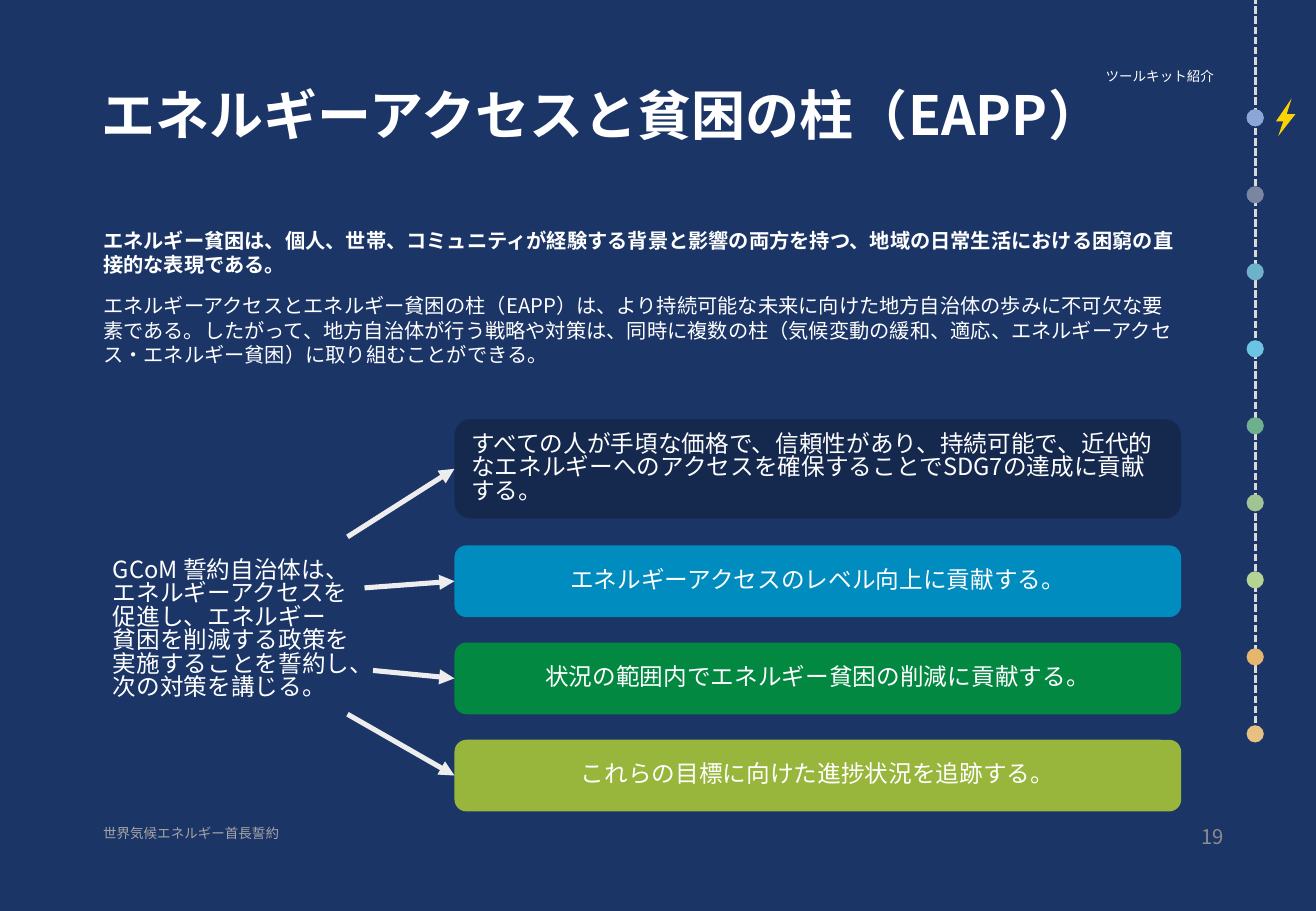
from lxml import etree
from pptx import Presentation
from pptx.dml.color import RGBColor
from pptx.enum.dml import MSO_LINE
from pptx.enum.shapes import MSO_CONNECTOR, MSO_SHAPE
from pptx.enum.text import MSO_ANCHOR, PP_ALIGN
from pptx.oxml.ns import qn
from pptx.util import Inches, Pt

LEFT, CENTER, RIGHT = PP_ALIGN.LEFT, PP_ALIGN.CENTER, PP_ALIGN.RIGHT
TOP, MIDDLE, BOTTOM = MSO_ANCHOR.TOP, MSO_ANCHOR.MIDDLE, MSO_ANCHOR.BOTTOM
FONT = "Noto Sans CJK JP"
C = {
    "navy": "1C3567", "dark": "15284D", "blue": "008CBE", "green": "038842",
    "lime": "99B63C", "white": "FFFFFF", "arrow": "EDEDED", "track": "D9D9D9",
    "footer": "A6A6A6", "number": "8C8C8C", "bolt": "FAD307",
}
C = {name: RGBColor.from_string(value) for name, value in C.items()}

prs = Presentation()
prs.slide_width, prs.slide_height = Inches(10.83), Inches(7.5)
s = prs.slides.add_slide(prs.slide_layouts[6])
s.background.fill.solid()
s.background.fill.fore_color.rgb = C["navy"]


def write(sp, paragraphs, size, color="white", align=LEFT, anchor=TOP, spacing=0.83):
    """Fill a shape with (text, bold) paragraphs."""
    tf = sp.text_frame
    tf.word_wrap = True
    tf.vertical_anchor = anchor
    for i, (text, bold) in enumerate(paragraphs):
        p = tf.add_paragraph() if i else tf.paragraphs[0]
        p.alignment, p.line_spacing = align, spacing
        p.space_before = Pt(10 if i else 0)
        for j, line in enumerate(text.split("\n")):
            if j:
                p.add_line_break()
            r = p.add_run()
            r.text = line
            r.font.size, r.font.bold, r.font.name = Pt(size), bold, FONT
            r.font.color.rgb = C[color]
            etree.SubElement(r.font._element, qn("a:ea")).set("typeface", FONT)


def add_filled(kind, x, y, w, h, color, alpha=None):
    sp = s.shapes.add_shape(kind, Inches(x), Inches(y), Inches(w), Inches(h))
    sp.shadow.inherit = False
    sp.line.fill.background()
    sp.fill.solid()
    sp.fill.fore_color.rgb = color
    if alpha:
        clr = sp.fill._xPr.find(qn("a:solidFill"))[0]
        etree.SubElement(clr, qn("a:alpha")).set("val", str(alpha * 1000))
    return sp


# Dotted progress track with one dot per chapter
track = s.shapes.add_connector(MSO_CONNECTOR.STRAIGHT, Inches(10.33), Inches(6.04),
                               Inches(10.33), 0)
track.line.color.rgb = C["track"]
track.line.width = Pt(1.5)
track.line.dash_style = MSO_LINE.SQUARE_DOT
etree.SubElement(track._element.spPr, qn("a:effectLst"))

CHAPTER_TINTS = [
    ["C3D2EF", "4C78CE"], ["1C3567"], ["008CBE"], ["00B0F0"], ["038842"],
    ["6AB24D"], ["92D050"], ["F19500"], ["F8A92A"],
]
for i, tints in enumerate(CHAPTER_TINTS):
    y = 0.9 + i * 0.634
    add_filled(MSO_SHAPE.OVAL, 10.26, y, 0.14, 0.14, C["track"])
    for tint in tints:
        add_filled(MSO_SHAPE.OVAL, 10.26, y, 0.14, 0.14, RGBColor.from_string(tint), 50)

# Lightning bolt marking the current chapter
BOLT_HALVES = [
    [(10.57, 1), (10.5, 1), (10.63, 0.81), (10.58, 0.97)],
    [(10.58, 0.94), (10.66, 0.94), (10.52, 1.12), (10.57, 0.97)],
]
for half in BOLT_HALVES:
    points = [(Inches(x), Inches(y)) for x, y in half]
    fb = s.shapes.build_freeform(*points[0])
    fb.add_line_segments(points[1:], close=True)
    sp = fb.convert_to_shape()
    sp.shadow.inherit = False
    sp.fill.solid()
    sp.fill.fore_color.rgb = C["bolt"]
    sp.line.fill.background()

# Text boxes: place, paragraphs, size, colour, alignment, anchor, line spacing
TEXTS = [
    ((0.74, 0.75, 8.67, 0.7), [("エネルギーアクセスと貧困の柱（EAPP）", True)],
     32, "white", LEFT, TOP, 0.75),
    ((6.67, 0.5, 3.42, 0.24), [("ツールキット紹介", False)],
     8, "white", RIGHT, BOTTOM, 0.75),
    ((0.75, 1.83, 9.05, 2.11), [
        ("エネルギー貧困は、個人、世帯、コミュニティが経験する背景と影響の両方を持つ、"
         "地域の日常生活における困窮の直接的な表現である。", True),
        ("エネルギーアクセスとエネルギー貧困の柱（EAPP）は、より持続可能な未来に向けた"
         "地方自治体の歩みに不可欠な要素である。したがって、地方自治体が行う戦略や対策は、"
         "同時に複数の柱（気候変動の緩和、適応、エネルギーアクセス・エネルギー貧困）に"
         "取り組むことができる。", False)],
     12, "white", LEFT, TOP, 1.0),
    ((0.83, 3.69, 2.23, 2.99), [
        ("GCoM 誓約自治体は、エネルギーアクセスを促進し、エネルギー\n"
         "貧困を削減する政策を実施することを誓約し、次の対策を講じる。", False)],
     14, "white", LEFT, MIDDLE, 0.83),
    ((0.75, 6.77, 1.83, 0.4), [("世界気候エネルギー首長誓約", False)],
     8, "footer", LEFT, TOP, 0.83),
    ((9.58, 6.77, 0.59, 0.4), [("19", False)], 12, "number", RIGHT, TOP, 0.83),
]
for place, *content in TEXTS:
    write(s.shapes.add_textbox(*map(Inches, place)), *content)

# Commitments: top, height, colour, alignment, text, arrow start
COMMITMENTS = [
    (3.45, 0.82, "dark", LEFT,
     "すべての人が手頃な価格で、信頼性があり、持続可能で、近代的なエネルギーへの"
     "アクセスを確保することでSDG7の達成に貢献する。", (2.86, 4.42)),
    (4.49, 0.59, "blue", CENTER, "エネルギーアクセスのレベル向上に貢献する。", (3, 4.84)),
    (5.29, 0.59, "green", CENTER, "状況の範囲内でエネルギー貧困の削減に貢献する。", (3.07, 5.52)),
    (6.09, 0.59, "lime", CENTER, "これらの目標に向けた進捗状況を追跡する。", (2.86, 5.88)),
]
for y, h, color, align, text, (x0, y0) in COMMITMENTS:
    sp = add_filled(MSO_SHAPE.ROUNDED_RECTANGLE, 3.74, y, 5.98, h, C[color])
    write(sp, [(text, False)], 14, align=align, anchor=MIDDLE)
    arrow = s.shapes.add_connector(MSO_CONNECTOR.STRAIGHT, Inches(x0), Inches(y0),
                                   Inches(3.74), Inches(y + h / 2))
    arrow.line.color.rgb = C["arrow"]
    arrow.line.width = Pt(3)
    etree.SubElement(arrow.line._get_or_add_ln(), qn("a:tailEnd")).set("type", "triangle")
    etree.SubElement(arrow._element.spPr, qn("a:effectLst"))

prs.save("out.pptx")
